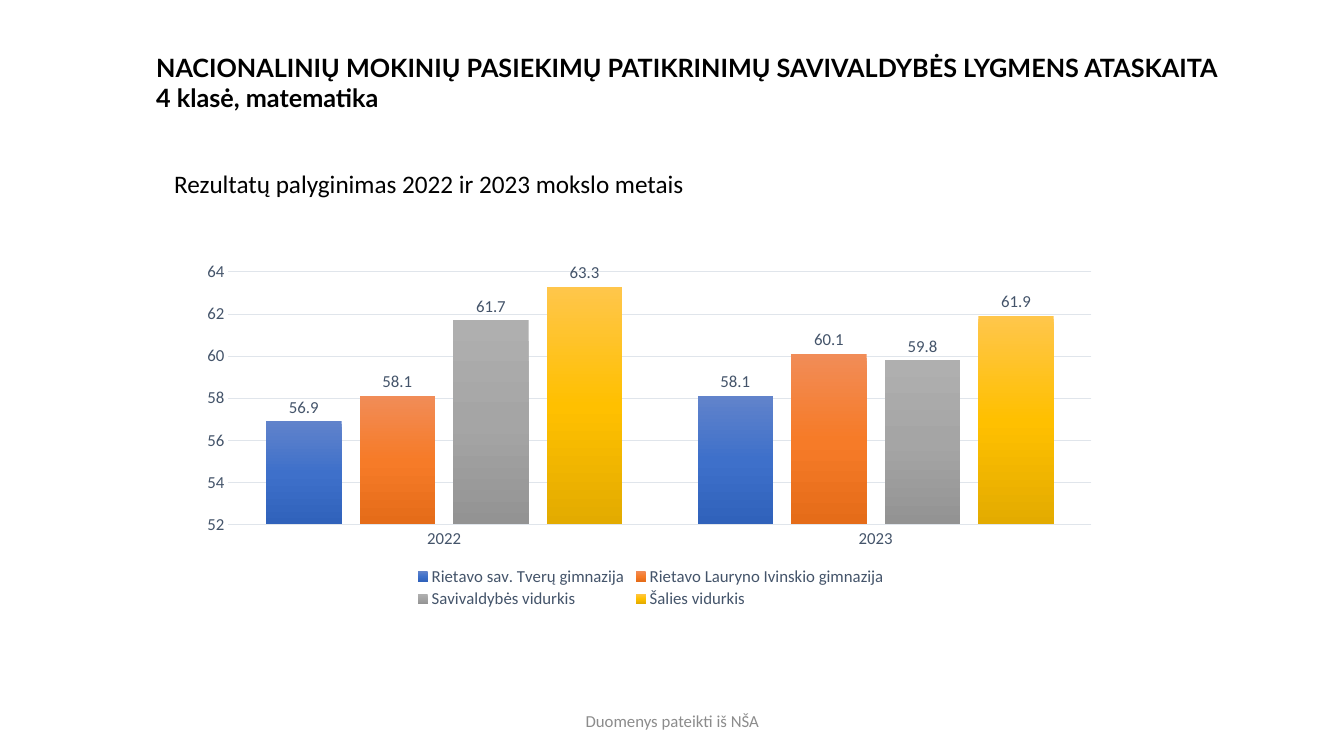
from dataclasses import dataclass

from lxml import etree
from pptx import Presentation
from pptx.chart.chart import Chart
from pptx.chart.data import CategoryChartData
from pptx.chart.series import BarSeries
from pptx.dml.color import RGBColor
from pptx.enum.chart import XL_CHART_TYPE, XL_LABEL_POSITION, XL_LEGEND_POSITION, XL_TICK_MARK
from pptx.enum.text import MSO_ANCHOR, MSO_AUTO_SIZE, PP_ALIGN
from pptx.oxml.ns import qn
from pptx.slide import Slide
from pptx.util import Cm, Pt

COLUMNS = XL_CHART_TYPE.COLUMN_CLUSTERED
OUTSIDE = XL_LABEL_POSITION.OUTSIDE_END
BOTTOM = XL_LEGEND_POSITION.BOTTOM
NO_TICK = XL_TICK_MARK.NONE
TOP, MIDDLE = MSO_ANCHOR.TOP, MSO_ANCHOR.MIDDLE
LEFT, CENTER = PP_ALIGN.LEFT, PP_ALIGN.CENTER
NO_FIT = MSO_AUTO_SIZE.NONE

TITLE_ONLY = 5
SLATE, GRID = "44546A", "E0E5EB"
YEARS = ("2022", "2023")


@dataclass(frozen=True)
class Caption:
    text: str
    box: tuple[float, float, float, float]
    size: int
    font: str = "Calibri"
    color: str = "000000"
    bold: bool = False
    align: PP_ALIGN = LEFT
    anchor: MSO_ANCHOR = TOP
    is_title: bool = False


@dataclass(frozen=True)
class Results:
    name: str
    scores: tuple[float, float]
    gradient: tuple[str, str, str]


CAPTIONS = (
    Caption("NACIONALINIŲ MOKINIŲ PASIEKIMŲ PATIKRINIMŲ SAVIVALDYBĖS LYGMENS ATASKAITA\v"
            "4 klasė, matematika", (3.68, 1.19, 27.43, 1.8), 18, "Lato",
            bold=True, is_title=True),
    Caption("Rezultatų palyginimas 2022 ir 2023 mokslo metais", (4.14, 4.11, 17.81, 1.02), 18),
    Caption("Duomenys pateikti iš NŠA", (11.23, 17.65, 11.43, 1.02), 12,
            color="8C8C8C", align=CENTER, anchor=MIDDLE),
)

RESULTS = (
    Results("Rietavo sav. Tverų gimnazija", (56.9, 58.1), ("6183CB", "3E70CA", "3062BB")),
    Results("Rietavo Lauryno Ivinskio gimnazija", (58.1, 60.1), ("F18C57", "F67B28", "E56C19")),
    Results("Savivaldybės vidurkis", (61.7, 59.8), ("AFAFAF", "A5A5A5", "939393")),
    Results("Šalies vidurkis", (63.3, 61.9), ("FFC64B", "FFC000", "E3AB00")),
)


def rgb(color: str) -> RGBColor:
    return RGBColor.from_string(color)


def apply(target: object, **values: object) -> None:
    for name, value in values.items():
        setattr(target, name, value)


def format_font(font: object, size: int, color: str, name: str = "Calibri",
                bold: bool = False) -> None:
    apply(font, size=Pt(size), name=name, bold=bold)
    font.color.rgb = rgb(color)


def add_caption(slide: Slide, caption: Caption) -> None:
    left, top, width, height = (Cm(length) for length in caption.box)
    if caption.is_title:
        holder = slide.shapes.title
        apply(holder, left=left, top=top, width=width, height=height)
    else:
        holder = slide.shapes.add_textbox(left, top, width, height)
    frame = holder.text_frame
    apply(frame, word_wrap=True, auto_size=NO_FIT, vertical_anchor=caption.anchor)
    paragraph = frame.paragraphs[0]
    apply(paragraph, text=caption.text, alignment=caption.align)
    for run in paragraph.runs:
        format_font(run.font, caption.size, caption.color, caption.font, caption.bold)


def place(part: etree._Element, index: int, x: float, y: float, w: float, h: float,
          inner: bool = False) -> None:
    """Fix a chart part at fractions of the chart's size."""
    for old in part.findall(qn("c:layout")):
        part.remove(old)
    layout = etree.Element(qn("c:layout"))
    part.insert(index, layout)
    manual = etree.SubElement(layout, qn("c:manualLayout"))
    settings = {"layoutTarget": "inner"} if inner else {}
    settings |= {"xMode": "edge", "yMode": "edge", "x": x, "y": y, "w": w, "h": h}
    for tag, value in settings.items():
        etree.SubElement(manual, qn(f"c:{tag}")).set("val", str(value))


def fill_gradient(series: BarSeries, colors: tuple[str, str, str]) -> None:
    fill = series.format.fill
    fill.gradient()
    fill.gradient_angle = 270
    stops = next(series._element.iter(qn("a:gsLst")))
    for old in list(stops):
        stops.remove(old)
    for position, color in zip((0, 50000, 100000), colors):
        stop = etree.SubElement(stops, qn("a:gs"), pos=str(position))
        etree.SubElement(stop, qn("a:srgbClr"), val=color)


def format_axes(chart: Chart) -> None:
    for axis in (chart.category_axis, chart.value_axis):
        apply(axis, major_tick_mark=NO_TICK, minor_tick_mark=NO_TICK)
        format_font(axis.tick_labels.font, 12, SLATE)
    scores = chart.value_axis
    apply(scores, minimum_scale=52, maximum_scale=64, major_unit=2, has_major_gridlines=True)
    scores.format.line.fill.background()
    for line in (chart.category_axis.format.line, scores.major_gridlines.format.line):
        line.width = Pt(0.75)
        line.color.rgb = rgb(GRID)


def add_results_chart(slide: Slide) -> None:
    data = CategoryChartData()
    data.categories = YEARS
    for results in RESULTS:
        data.add_series(results.name, results.scores)
    chart = slide.shapes.add_chart(COLUMNS, Cm(4.83), Cm(6.4), Cm(23.14), Cm(9.09), data).chart
    apply(chart, has_title=False, has_legend=True)
    format_font(chart.font, 10, "000000")
    format_axes(chart)

    # Columns with their values
    plot = chart.plots[0]
    apply(plot, gap_width=100, overlap=-24, vary_by_categories=False)
    for series, results in zip(plot.series, RESULTS):
        series.invert_if_negative = False
        fill_gradient(series, results.gradient)
        apply(series.data_labels, show_value=True, position=OUTSIDE)
        format_font(series.data_labels.font, 12, SLATE)

    # Legend and plot positions
    legend = chart.legend
    apply(legend, position=BOTTOM, include_in_layout=False)
    format_font(legend.font, 12, SLATE)
    place(legend._element, 1, 0.24, 0.86, 0.52, 0.13)
    place(next(chart._chartSpace.iter(qn("c:plotArea"))), 0, 0.04, 0.05, 0.94, 0.7, inner=True)


def main() -> None:
    deck = Presentation()
    apply(deck, slide_width=Cm(33.87), slide_height=Cm(19.05))
    slide = deck.slides.add_slide(deck.slide_layouts[TITLE_ONLY])
    add_results_chart(slide)
    for caption in CAPTIONS:
        add_caption(slide, caption)
    deck.save("out.pptx")


if __name__ == "__main__":
    main()
